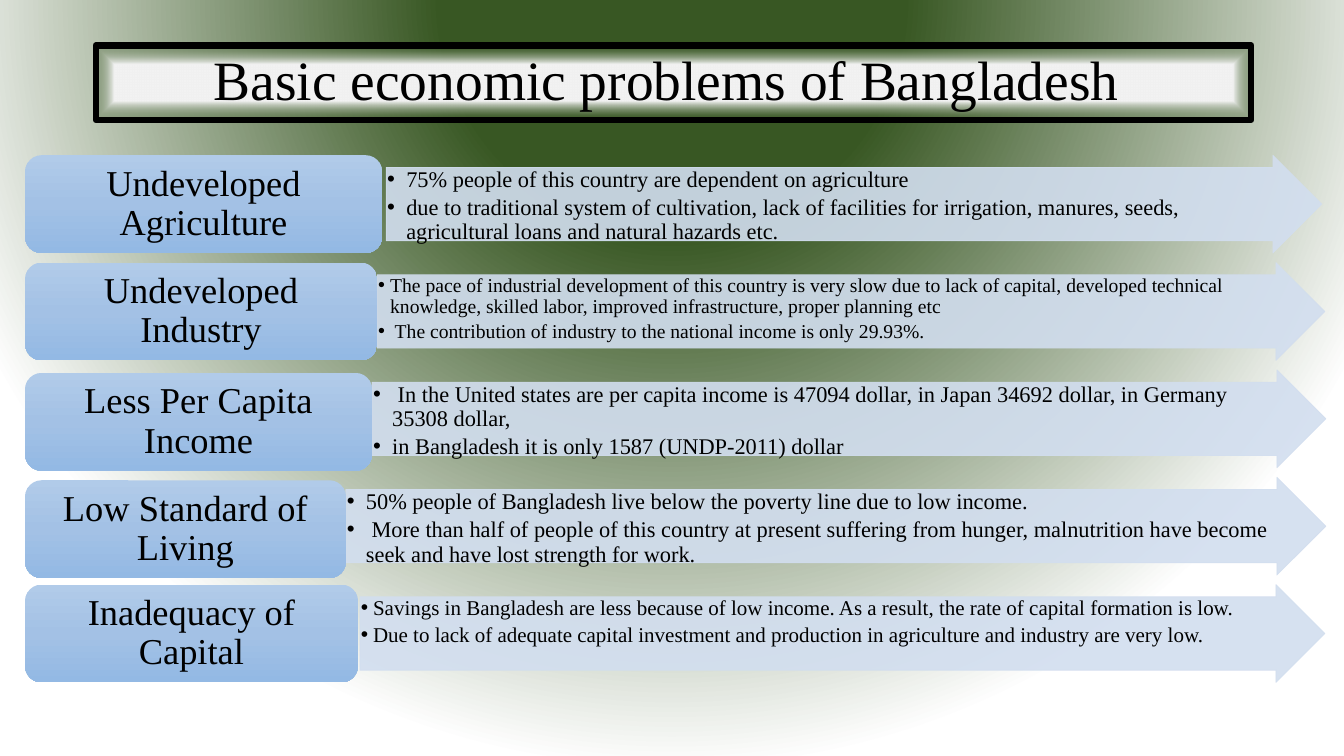
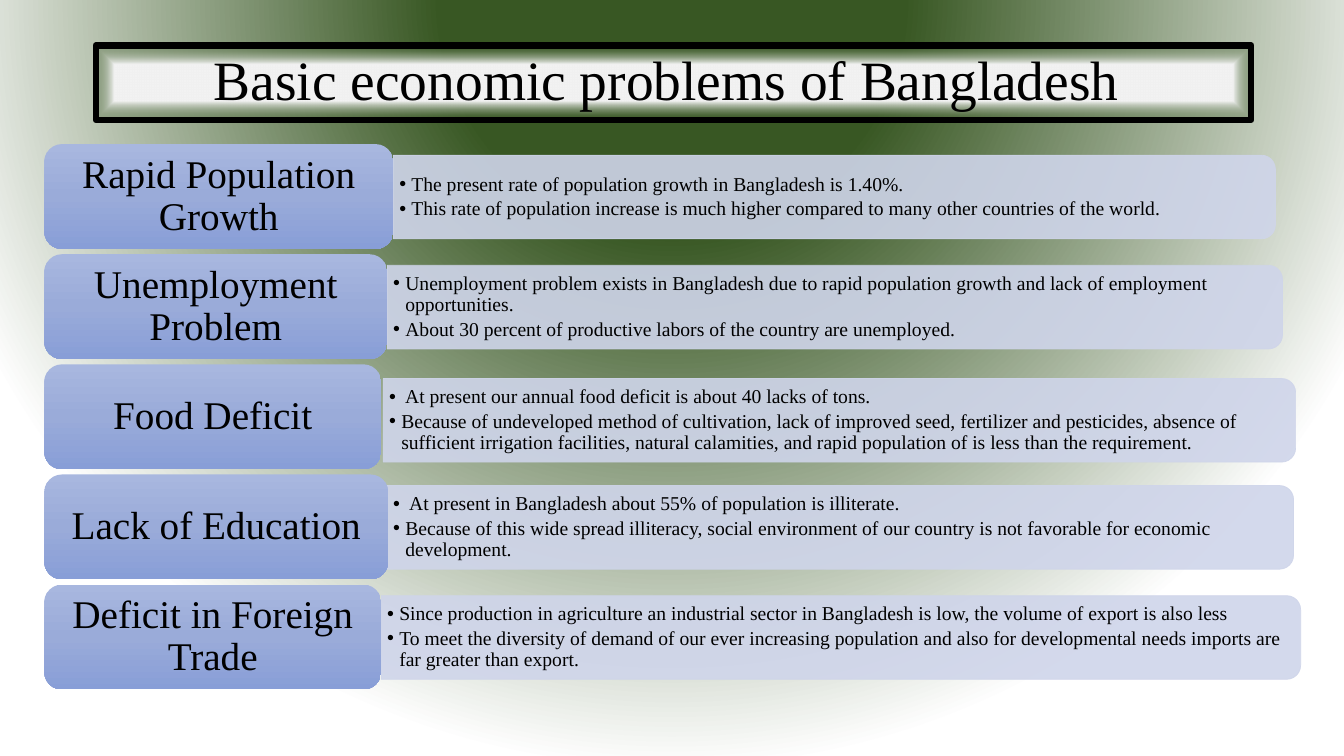
from dataclasses import dataclass

from lxml import etree
from pptx import Presentation
from pptx.dml.color import RGBColor
from pptx.dml.fill import FillFormat
from pptx.enum.shapes import MSO_SHAPE
from pptx.enum.text import MSO_ANCHOR, MSO_AUTO_SIZE, PP_ALIGN
from pptx.oxml import parse_xml
from pptx.oxml.ns import nsdecls, qn
from pptx.presentation import Presentation as Deck
from pptx.shapes.autoshape import Shape
from pptx.slide import Slide
from pptx.text.text import TextFrame, _Paragraph
from pptx.util import Inches, Pt

FONT = "Times New Roman"
BLACK, WHITE, GREEN, PALE_GREY = "000000", "FFFFFF", "385723", "F2F2F2"
TITLE = "Basic economic problems of Bangladesh "
TITLE_ONLY = 5
DOWNWARD = '<a:lin ang="5400000" scaled="0"/>'


@dataclass(frozen=True)
class Problem:
    label: str
    label_width: float
    panel_left: float
    panel_width: float
    points: tuple[str, ...]
    size: int = 14
    indent: float = 0.12
    label_shift: float = 0
    panel_shift: float = 0


@dataclass(frozen=True)
class Style:
    """Look and row rhythm of one slide; lengths in inches."""
    arrow: bool
    label_stops: tuple[tuple[int, str, int], ...]
    panel_color: str
    label_left: float
    label_top: float
    label_height: float
    label_size: int
    label_margins: tuple[float, float]
    panel_top: float
    panel_height: float
    step: float
    text_top: float
    text_height: float
    text_trim: float
    text_margins: tuple[float, float]
    text_anchor: MSO_ANCHOR


ARROWS = Style(
    arrow=True,
    label_stops=((0, "B1CBE9", 100), (50, "A3C1E5", 100), (100, "93B9E4", 100)),
    panel_color="D2DEEF", label_left=0.25, label_top=1.54, label_height=0.97,
    label_size=26, label_margins=(0.11, 0.05), panel_top=1.54, panel_height=0.97,
    step=1.065, text_top=0.12, text_height=0.73, text_trim=0.36,
    text_margins=(0.01, 0.01), text_anchor=MSO_ANCHOR.TOP,
)
CARDS = Style(
    arrow=False,
    label_stops=((0, "A8B7DF", 100), (50, "9AABD9", 100), (100, "889ED7", 100)),
    panel_color="CFD5EA", label_left=0.44, label_top=1.43, label_height=1.04,
    label_size=28, label_margins=(0.12, 0.06), panel_top=1.54, panel_height=0.83,
    step=1.0925, text_top=0.04, text_height=0.75, text_trim=0.04,
    text_margins=(0.06, 0.03), text_anchor=MSO_ANCHOR.MIDDLE,
)

PRODUCTION_PROBLEMS = (
    Problem("Undeveloped Agriculture", 3.54, 3.83, 9.28, (
        "75% people of this country are dependent on agriculture",
        "due to traditional system of cultivation, lack of facilities for irrigation, "
        "manures, seeds, agricultural loans and natural hazards etc.",
    ), size=16, indent=0.19),
    Problem("Undeveloped Industry", 3.49, 3.74, 9.4, (
        "The pace of industrial development of this country is very slow due to lack of "
        "capital, developed technical knowledge, skilled labor, improved infrastructure, "
        "proper planning etc",
        " The contribution of industry to the national income is only 29.93%.",
    )),
    Problem("Less Per Capita Income", 3.44, 3.69, 9.46, (
        " In the United states are per capita income is 47094 dollar, in Japan 34692 "
        "dollar, in Germany 35308 dollar,",
        "in Bangladesh it is only 1587 (UNDP-2011) dollar",
    ), size=16, indent=0.19, label_shift=0.03),
    Problem("Low Standard of Living", 3.18, 3.43, 9.72, (
        "50% people of Bangladesh live below the poverty line due to low income.",
        " More than half of people of this country at present suffering from hunger, "
        "malnutrition have become seek and have lost strength for work.",
    ), size=16, indent=0.19, label_shift=0.03),
    Problem("Inadequacy of Capital", 3.3, 3.57, 9.57, (
        "Savings in Bangladesh are less because of low income. As a result, the rate of "
        "capital formation is low.",
        "Due to lack of adequate capital investment and production in agriculture and "
        "industry are very low.",
    ), size=15),
)
SOCIAL_PROBLEMS = (
    Problem("Rapid Population Growth", 3.46, 3.9, 8.75, (
        "The present rate of population growth in Bangladesh is 1.40%.",
        "This rate of population increase is much higher compared to many other "
        "countries of the world.",
    )),
    Problem("Unemployment Problem", 3.4, 3.84, 8.88, (
        "Unemployment problem exists in Bangladesh due to rapid population growth and "
        "lack of employment opportunities.",
        "About 30 percent of productive labors of the country are unemployed.",
    )),
    Problem("Food Deficit", 3.34, 3.8, 9.05, (
        " At present our annual food deficit is about 40 lacks of tons.",
        "Because of undeveloped method of cultivation, lack of improved seed, fertilizer "
        "and pesticides, absence of sufficient irrigation facilities, natural calamities, "
        "and rapid population of is less than the requirement.",
    ), panel_shift=0.03),
    Problem("Lack of Education", 3.41, 3.84, 8.99, (
        " At present in Bangladesh about 55% of population is illiterate.",
        "Because of this wide spread illiteracy, social environment of our country is "
        "not favorable for economic development.",
    )),
    Problem("Deficit in Foreign Trade", 3.34, 3.78, 9.12, (
        "Since production in agriculture an industrial sector in Bangladesh is low, the "
        "volume of export is also less",
        "To meet the diversity of demand of our ever increasing population and also for "
        "developmental needs imports are far greater than export.",
    )),
)


def rgb(color: str) -> RGBColor:
    return RGBColor.from_string(color)


def path_direction(kind: str, left: int, top: int, right: int, bottom: int) -> str:
    return (f'<a:path path="{kind}"><a:fillToRect l="{left * 1000}" t="{top * 1000}" '
            f'r="{right * 1000}" b="{bottom * 1000}"/></a:path>')


def fill_gradient(fill: FillFormat, owner: etree._Element,
                  stops: tuple[tuple[int, str, int], ...], direction: str) -> None:
    """Fill owner with stops of (position %, colour, opacity %)."""
    fill.solid()
    stop_xml = "".join(
        f'<a:gs pos="{position * 1000}"><a:srgbClr val="{color}">'
        f'<a:alpha val="{opacity * 1000}"/></a:srgbClr></a:gs>'
        for position, color, opacity in stops)
    gradient = parse_xml(f'<a:gradFill {nsdecls("a")} rotWithShape="1">'
                         f'<a:gsLst>{stop_xml}</a:gsLst>{direction}</a:gradFill>')
    owner.replace(owner.find(qn("a:solidFill")), gradient)


def fill_translucent(shape: Shape, color: str, opacity: int) -> None:
    shape.fill.solid()
    shape.fill.fore_color.rgb = rgb(color)
    shape.line.width = Pt(0.5)
    shape.line.color.rgb = rgb(color)
    for tint in shape._element.spPr.iter(qn("a:srgbClr")):
        etree.SubElement(tint, qn("a:alpha"), val=str(opacity * 1000))


def set_frame(frame: TextFrame, margins: tuple[float, float], anchor: MSO_ANCHOR) -> None:
    frame.word_wrap = True
    frame.auto_size = MSO_AUTO_SIZE.NONE
    frame.vertical_anchor = anchor
    frame.margin_left = frame.margin_right = Inches(margins[0])
    frame.margin_top = frame.margin_bottom = Inches(margins[1])


def write(paragraph: _Paragraph, text: str, size: float, align: PP_ALIGN) -> None:
    paragraph.alignment = align
    paragraph.line_spacing = 0.9
    run = paragraph.add_run()
    run.text = text
    run.font.name = FONT
    run.font.size = Pt(size)
    run.font.color.rgb = rgb(BLACK)


def add_bullet(paragraph: _Paragraph, indent: float) -> None:
    properties = paragraph._p.get_or_add_pPr()
    properties.set("marL", str(Inches(indent)))
    properties.set("indent", str(-Inches(indent)))
    etree.SubElement(properties, qn("a:buFont"), typeface="Arial")
    etree.SubElement(properties, qn("a:buChar"), char="•")


def add_title(slide: Slide) -> None:
    title = slide.shapes.title
    title.left, title.top = Inches(0.95), Inches(0.45)
    title.width, title.height = Inches(11.46), Inches(0.74)
    fill_gradient(title.fill, title._element.spPr,
                  ((49, PALE_GREY, 100), (99, GREEN, 28)),
                  path_direction("shape", 50, 50, 50, 50))
    title.line.color.rgb = rgb(BLACK)
    title.line.width = Pt(4.5)
    set_frame(title.text_frame, (0.1, 0.05), MSO_ANCHOR.MIDDLE)
    write(title.text_frame.paragraphs[0], TITLE, 39.6, PP_ALIGN.CENTER)


def add_panel(slide: Slide, problem: Problem, style: Style, top: float) -> None:
    left, width, height = problem.panel_left, problem.panel_width, style.panel_height
    if style.arrow:
        panel = slide.shapes.add_shape(MSO_SHAPE.RIGHT_ARROW, Inches(left), Inches(top),
                                       Inches(width), Inches(height))
        panel.adjustments[0], panel.adjustments[1] = 0.75, 0.5
    else:
        # A quarter turn about the centre puts the rounded corners on the right.
        overhang = (width - height) / 2
        panel = slide.shapes.add_shape(
            MSO_SHAPE.ROUND_2_SAME_RECTANGLE, Inches(left + overhang),
            Inches(top - overhang), Inches(height), Inches(width))
        panel.rotation = 90
    panel.shadow.inherit = False
    fill_translucent(panel, style.panel_color, 90)


def add_points(slide: Slide, problem: Problem, style: Style, top: float) -> None:
    box = slide.shapes.add_textbox(
        Inches(problem.panel_left), Inches(top + style.text_top),
        Inches(problem.panel_width - style.text_trim), Inches(style.text_height))
    frame = box.text_frame
    set_frame(frame, style.text_margins, style.text_anchor)
    for index, point in enumerate(problem.points):
        paragraph = frame.add_paragraph() if index else frame.paragraphs[0]
        add_bullet(paragraph, problem.indent)
        paragraph.space_after = Pt(round(problem.size * 0.18, 1))
        write(paragraph, point, problem.size, PP_ALIGN.LEFT)


def add_label(slide: Slide, problem: Problem, style: Style, top: float) -> None:
    label = slide.shapes.add_shape(
        MSO_SHAPE.ROUNDED_RECTANGLE, Inches(style.label_left), Inches(top),
        Inches(problem.label_width), Inches(style.label_height))
    label.shadow.inherit = False
    fill_gradient(label.fill, label._element.spPr, style.label_stops, DOWNWARD)
    label.line.fill.background()
    set_frame(label.text_frame, style.label_margins, MSO_ANCHOR.MIDDLE)
    write(label.text_frame.paragraphs[0], problem.label, style.label_size, PP_ALIGN.CENTER)


def add_problem_slide(deck: Deck, problems: tuple[Problem, ...], style: Style) -> None:
    slide = deck.slides.add_slide(deck.slide_layouts[TITLE_ONLY])
    add_title(slide)
    for row, problem in enumerate(problems):
        offset = row * style.step
        panel_top = style.panel_top + offset + problem.panel_shift
        add_panel(slide, problem, style, panel_top)
        add_points(slide, problem, style, panel_top)
        add_label(slide, problem, style, style.label_top + offset + problem.label_shift)


def set_background(deck: Deck) -> None:
    master = deck.slide_master
    fill = master.background.fill
    fill_gradient(fill, master._element.find(f".//{qn('p:bgPr')}"),
                  ((30, GREEN, 100), (100, WHITE, 100)),
                  path_direction("circle", 50, -80, 50, 180))


def main() -> None:
    deck = Presentation()
    deck.slide_width, deck.slide_height = Inches(13.33), Inches(7.5)
    set_background(deck)
    add_problem_slide(deck, PRODUCTION_PROBLEMS, ARROWS)
    add_problem_slide(deck, SOCIAL_PROBLEMS, CARDS)
    deck.save("out.pptx")


if __name__ == "__main__":
    main()
